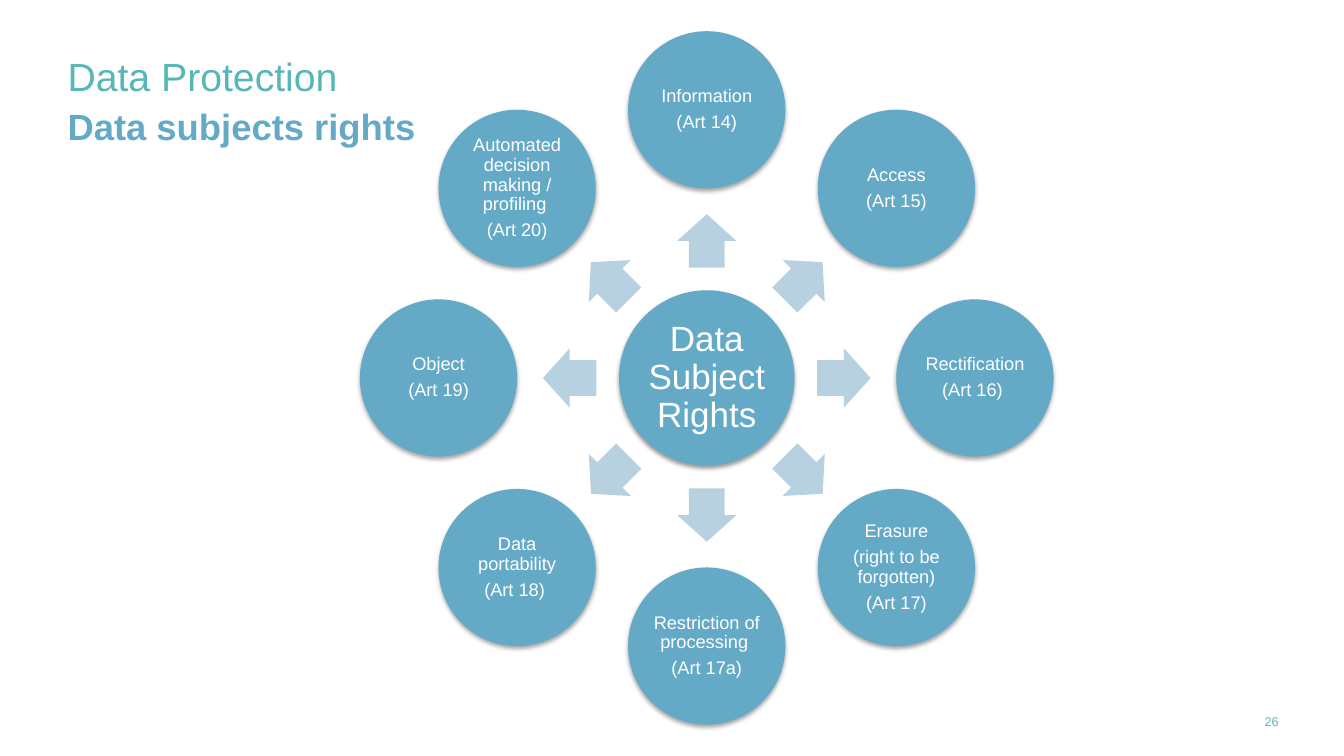
"""Build a slide showing the rights of data subjects as a radial diagram."""
from math import cos, radians, sin

from lxml import etree
from pptx import Presentation
from pptx.dml.color import RGBColor
from pptx.enum.shapes import MSO_SHAPE
from pptx.enum.text import MSO_ANCHOR, PP_ALIGN
from pptx.oxml.ns import qn
from pptx.util import Inches, Pt

OVAL, ARROW = MSO_SHAPE.OVAL, MSO_SHAPE.RIGHT_ARROW
LEFT, MID, RIGHT = PP_ALIGN.LEFT, PP_ALIGN.CENTER, PP_ALIGN.RIGHT
TOP, MIDDLE = MSO_ANCHOR.TOP, MSO_ANCHOR.MIDDLE

TITLE = "Data Protection"
SUBTITLE = "Data subjects rights"
NUMBER = "26"
HUB = ["Data Subject Rights"]
RIGHTS = [
    ["Information", "(Art 14)"],
    ["Access", "(Art 15)"],
    ["Rectification", "(Art 16) "],
    ["Erasure", "(right to be forgotten)", "(Art 17)"],
    ["Restriction of processing ", "(Art 17a)"],
    ["Data portability", "(Art 18) "],
    ["Object", "(Art 19)"],
    ["Automated decision making / profiling ", "(Art 20)"],
]
COLORS = {"teal": "58B7B6", "blue": "64AAC7", "pale": "B8D1E0",
          "white": "FFFFFF", "black": "000000"}
CX, CY = 7.01, 3.75
RING, ARROW_RING = 2.66, 1.36
HUB_SIZE, NODE_SIZE = 1.74, 1.56
ARROW_W, ARROW_H = 0.53, 0.59


def color(name):
    return RGBColor.from_string(COLORS[name])


def write(shape, lines, size, tone, align=LEFT, bold=False, anchor=TOP,
          inset=(0, 0, 0, 0)):
    frame = shape.text_frame
    frame.text = "\n".join(lines)
    frame.word_wrap = True
    frame.vertical_anchor = anchor
    (frame.margin_left, frame.margin_top,
     frame.margin_right, frame.margin_bottom) = map(Inches, inset)
    for para in frame.paragraphs:
        para.alignment = align
        for run in para.runs:
            font = run.font
            font.name, font.size, font.bold = "Arial", Pt(size), bold
            font.color.rgb = color(tone)


def add_label(slide, box, text, size, tone, **style):
    shape = slide.shapes.add_textbox(*map(Inches, box))
    write(shape, [text], size, tone, **style)


def add_solid(slide, kind, x, y, wide, high, tone):
    shape = slide.shapes.add_shape(
        kind, Inches(x - wide / 2), Inches(y - high / 2), Inches(wide), Inches(high))
    shape.fill.solid()
    shape.fill.fore_color.rgb = color(tone)
    shape.line.fill.background()
    shape.shadow.inherit = False
    return shape


def add_shadow(shape, alpha, dist):
    effects = shape.element.spPr.find(qn("a:effectLst"))
    outer = etree.SubElement(
        effects, qn("a:outerShdw"), blurRad=str(Pt(3.1)), dist=str(Pt(dist)),
        dir="5400000", rotWithShape="0")
    shade = etree.SubElement(outer, qn("a:srgbClr"), val=COLORS["black"])
    etree.SubElement(shade, qn("a:alpha"), val=str(alpha * 1000))


def add_disc(slide, x, y, width, lines, size, inset, alpha, dist):
    disc = add_solid(slide, OVAL, x, y, width, width, "blue")
    add_shadow(disc, alpha, dist)
    write(disc, lines, size, "white", align=MID, anchor=MIDDLE, inset=[inset] * 4)
    for i, para in enumerate(disc.text_frame.paragraphs):
        para.line_spacing = 0.9
        if i:
            para.space_before = Pt(4.5)


def main():
    deck = Presentation()
    deck.slide_width, deck.slide_height = Inches(13.33), Inches(7.5)
    slide = deck.slides.add_slide(deck.slide_layouts[5])

    title = slide.shapes.title
    title.left, title.top, title.width, title.height = map(
        Inches, (0.67, 0.51, 12, 0.49))
    write(title, [TITLE], 28, "teal", anchor=MIDDLE, inset=(0, 0.05, 0.1, 0.05))
    add_label(slide, (0.67, 1.03, 12, 0.46), SUBTITLE, 26, "blue", bold=True)
    add_label(slide, (11.39, 7.08, 1.29, 0.46), NUMBER, 9, "teal", align=RIGHT)

    add_disc(slide, CX, CY, HUB_SIZE, HUB, 25, 0.03, 38, 1.6)
    step = 360 / len(RIGHTS)
    for i, lines in enumerate(RIGHTS):
        turn = i * step - 90
        dx, dy = cos(radians(turn)), sin(radians(turn))
        arrow = add_solid(slide, ARROW, CX + ARROW_RING * dx, CY + ARROW_RING * dy,
                          ARROW_W, ARROW_H, "pale")
        arrow.adjustments[0], arrow.adjustments[1] = 0.6, 0.5
        arrow.rotation = turn % 360
        add_disc(slide, CX + RING * dx, CY + RING * dy, NODE_SIZE,
                 lines, 13, 0.02, 35, 1.8)

    deck.save("out.pptx")


if __name__ == "__main__":
    main()
